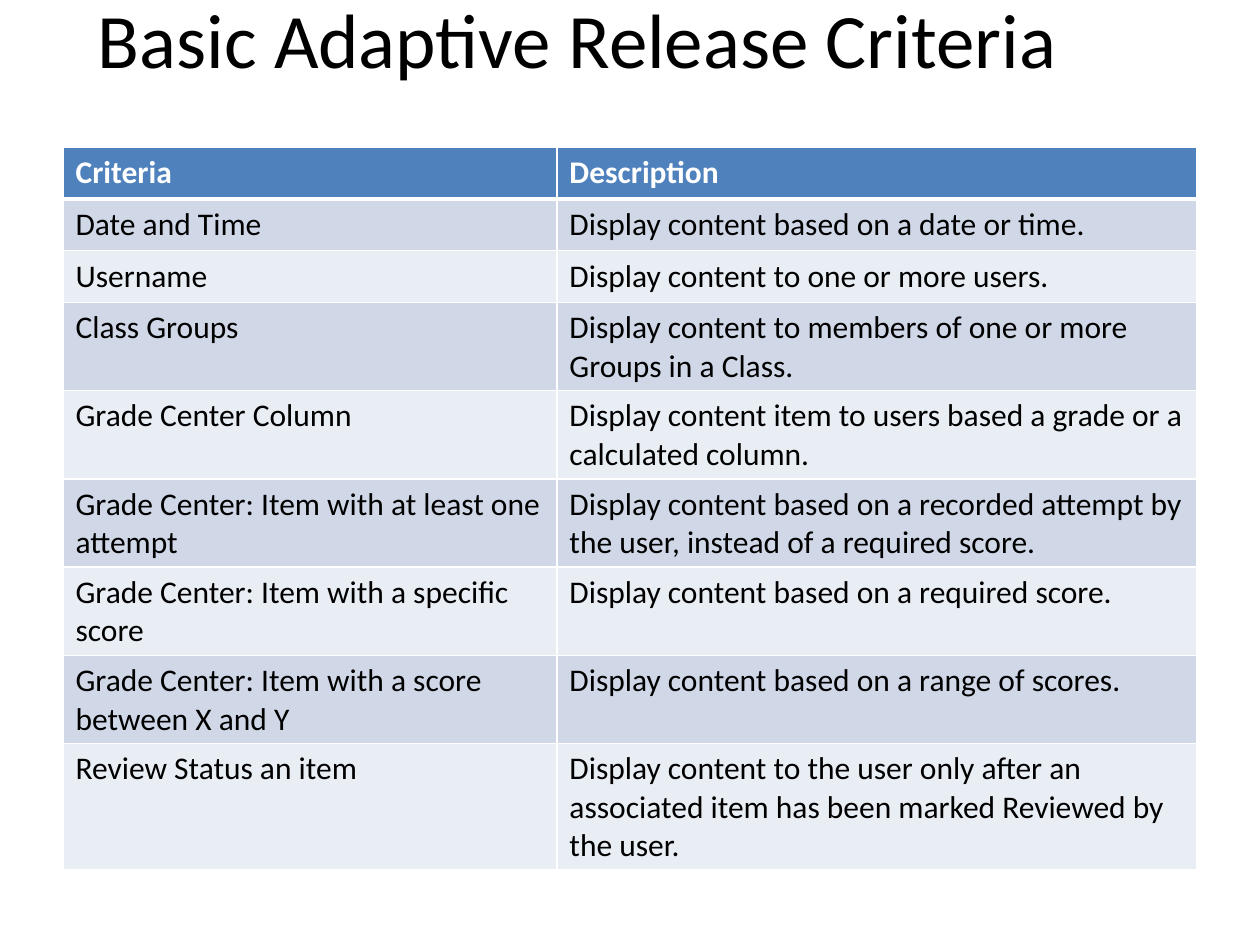
from lxml.etree import SubElement as Sub
from pptx import Presentation
from pptx.dml.color import RGBColor
from pptx.enum.text import MSO_ANCHOR as Anchor, PP_ALIGN as Align
from pptx.oxml.ns import qn
from pptx.util import Inches, Pt

FONT = "Calibri"
BLACK, WHITE, BLUE = "000000", "FFFFFF", "4F81BD"
BANDS = ["D0D8E8", "E9EDF4"]

ROWS = [
    ("Criteria", "Description"),
    ("Date and Time", "Display content based on a date or time."),
    ("Username", "Display content to one or more users."),
    ("Class Groups",
     "Display content to members of one or more Groups in a Class."),
    ("Grade Center Column",
     "Display content item to users based a grade or a calculated column."),
    ("Grade Center: Item with at least one attempt",
     "Display content based on a recorded attempt by the user, "
     "instead of a required score."),
    ("Grade Center: Item with a specific score",
     "Display content based on a required score."),
    ("Grade Center: Item with a score between X and Y",
     "Display content based on a range of scores."),
    ("Review Status an item",
     "Display content to the user only after an associated item "
     "has been marked Reviewed by the user."),
]


def color(code):
    return RGBColor.from_string(code)


def add_run(para, text, size, code, bold=False):
    run = para.add_run()
    run.text = text
    font = run.font
    font.name, font.size, font.bold = FONT, Pt(size), bold
    font.color.rgb = color(code)


def add_edge(cell, side, width):
    line = Sub(cell._tc.get_or_add_tcPr(), qn(f"a:ln{side}"), w=str(Pt(width)))
    fill = Sub(line, qn("a:solidFill"))
    Sub(fill, qn("a:srgbClr"), val=WHITE)


def add_title(slide, left, top, width, height, text):
    box = slide.shapes.add_textbox(
        Inches(left), Inches(top), Inches(width), Inches(height))
    frame = box.text_frame
    frame.word_wrap = True
    frame.vertical_anchor = Anchor.MIDDLE
    para = frame.paragraphs[0]
    para.alignment = Align.CENTER
    add_run(para, text, 44, BLACK)


def add_grid(slide, left, top, widths, height, rows):
    table = slide.shapes.add_table(
        len(rows), len(widths), Inches(left), Inches(top),
        Inches(sum(widths)), Inches(height * len(rows))).table
    for col, width in zip(table.columns, widths):
        col.width = Inches(width)
    for i, row in enumerate(rows):
        head = i == 0
        for j, text in enumerate(row):
            cell = table.cell(i, j)
            # Borders go before the fill; a thick rule closes the header
            for side in "LRTB":
                thick = (i, side) in [(0, "B"), (1, "T")]
                add_edge(cell, side, 3 if thick else 1)
            cell.fill.solid()
            cell.fill.fore_color.rgb = color(
                BLUE if head else BANDS[(i - 1) % 2])
            add_run(cell.text_frame.paragraphs[0], text, 18,
                    WHITE if head else BLACK, head)


def main():
    deck = Presentation()
    deck.slide_width, deck.slide_height = Inches(10), Inches(7.5)
    slide = deck.slides.add_slide(deck.slide_layouts[6])
    # Title
    add_title(slide, 0.5, -0.33, 8.17, 1.25, "Basic Adaptive Release Criteria")
    # Criteria table
    add_grid(slide, 0.5, 1.17, [3.92, 5.08], 0.41, ROWS)
    deck.save("out.pptx")


if __name__ == "__main__":
    main()
